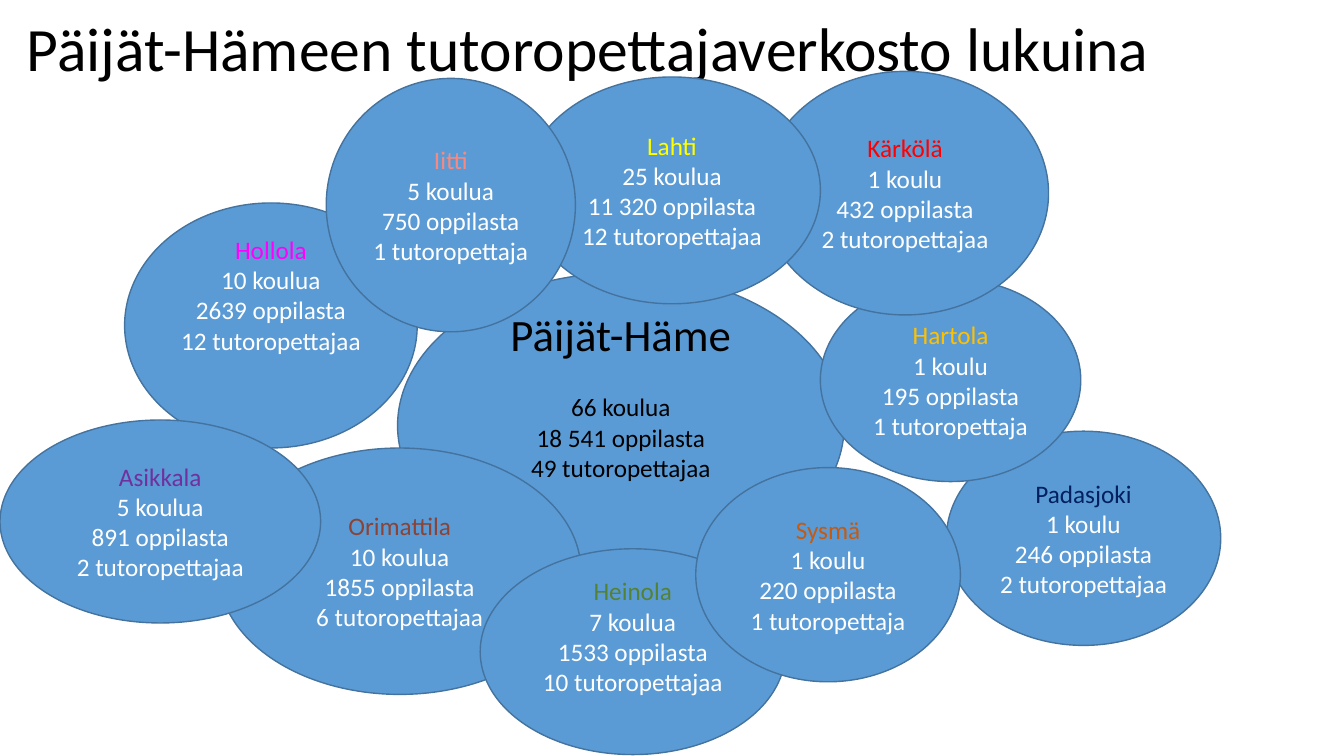
from dataclasses import dataclass

from pptx import Presentation
from pptx.dml.color import RGBColor
from pptx.enum import shapes, text
from pptx.util import Pt


@dataclass(frozen=True)
class Theme:
    font: str = "Calibri"
    fill: str = "5B9BD5"
    outline: str = "43739E"
    dark: str = "000000"
    light: str = "FFFFFF"
    title_size: int = 44
    region_size: int = 32
    body_size: int = 18
    line_height: int = 22


def figures(schools, pupils, tutors):
    """Return the three text lines, with Finnish singular or partitive nouns."""
    return [
        f"{schools} {'koulu' if schools == 1 else 'koulua'}",
        f"{pupils} oppilasta",
        f"{tutors} {'tutoropettaja' if tutors == 1 else 'tutoropettajaa'}",
    ]


class Slide:
    def __init__(self, deck, theme):
        self.theme = theme
        self.page = deck.slides.add_slide(deck.slide_layouts[6])

    def format(self, para, size, color):
        for span in para.runs:
            span.font.name = self.theme.font
            span.font.size = Pt(size)
            span.font.color.rgb = RGBColor.from_string(color)

    def title(self, words, area):
        box = self.page.shapes.add_textbox(*map(Pt, area))
        frame = box.text_frame
        frame.word_wrap = True
        frame.vertical_anchor = text.MSO_ANCHOR.MIDDLE
        frame.text = words
        para = frame.paragraphs[0]
        para.line_spacing = 0.9
        self.format(para, self.theme.title_size, self.theme.dark)

    def bubble(self, name, lines, area, name_color, name_size, body_color,
               gap=0, lift=0):
        """Draw an ellipse; gap follows the name, lift is extra bottom inset in lines."""
        theme = self.theme
        oval = self.page.shapes.add_shape(shapes.MSO_SHAPE.OVAL, *map(Pt, area))
        oval.shadow.inherit = False
        oval.fill.solid()
        oval.fill.fore_color.rgb = RGBColor.from_string(theme.fill)
        oval.line.color.rgb = RGBColor.from_string(theme.outline)
        oval.line.width = Pt(1)

        frame = oval.text_frame
        frame.word_wrap = True
        frame.vertical_anchor = text.MSO_ANCHOR.MIDDLE
        frame.margin_left = frame.margin_right = 0
        frame.margin_bottom = Pt(3.6 + lift * theme.line_height)
        frame.text = "\n".join([name, *lines])
        for para in frame.paragraphs:
            para.alignment = text.PP_ALIGN.CENTER
            self.format(para, theme.body_size, body_color)
        heading, first_line = frame.paragraphs[:2]
        self.format(heading, name_size, name_color)
        first_line.space_before = Pt(gap * theme.line_height)

    def region(self, name, counts, area):
        theme = self.theme
        self.bubble(name, figures(*counts), area, theme.dark,
                    theme.region_size, theme.dark, gap=1, lift=2)

    def municipality(self, name, color, counts, area, lift=0):
        theme = self.theme
        self.bubble(name, figures(*counts), area, color,
                    theme.body_size, theme.light, lift=lift)


# Back to front: name, colour, (schools, pupils, tutors), area, lines of lift
MUNICIPALITIES = [
    ("Padasjoki", "002060", (1, "246", 2), (676, 308, 196, 153), 0),
    ("Orimattila", "894337", (10, "1855", 6), (156, 320, 259, 176), 0),
    ("Hartola", "FFC000", (1, "195", 1), (586, 199, 186, 145), 0),
    ("Kärkölä", "FF0000", (1, "432", 2), (544, 51, 205, 174), 0),
    ("Lahti", "FFFF00", (25, "11 320", 12), (374, 55, 212, 162), 0),
    ("Hollola", "FF00FF", (10, "2639", 12), (89, 145, 209, 175), 2),
    ("Iitti", "F78981", (5, "750", 1), (233, 56, 178, 181), 0),
    ("Asikkala", "7030A0", (5, "891", 2), (0, 300, 229, 145), 0),
    ("Heinola", "548235", (7, "1533", 10), (343, 392, 218, 147), 1),
    ("Sysmä", "C55A11", (1, "220", 1), (497, 334, 189, 153), 0),
]


def main():
    deck = Presentation()
    deck.slide_width, deck.slide_height = Pt(960), Pt(540)
    slide = Slide(deck, Theme())
    slide.title("Päijät-Hämeen tutoropettajaverkosto lukuina", (12, 0, 882, 74))
    slide.region("Päijät-Häme", (66, "18 541", 49), (284, 195, 319, 218))
    for municipality in MUNICIPALITIES:
        slide.municipality(*municipality)
    deck.save("out.pptx")


if __name__ == "__main__":
    main()
